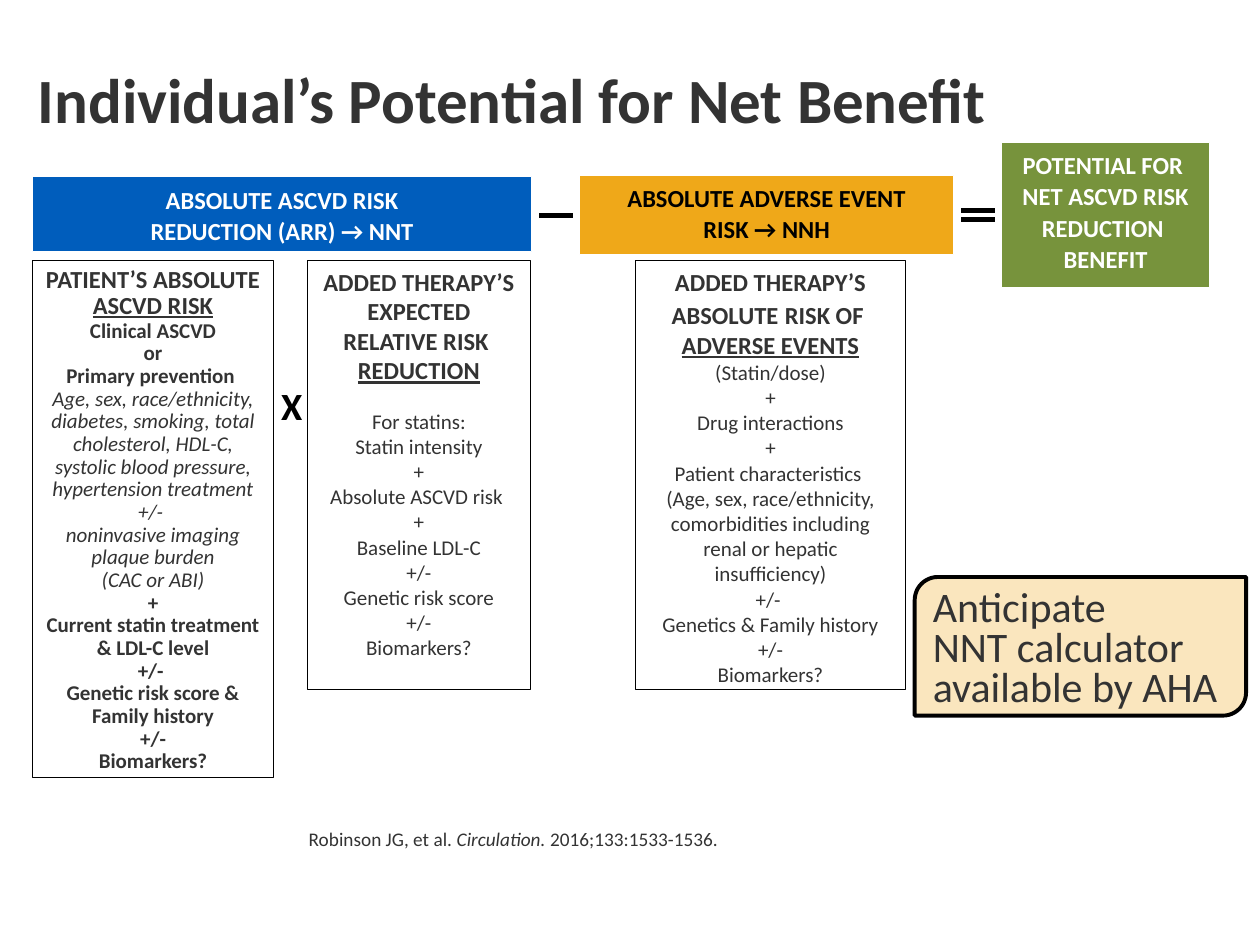
from collections import namedtuple
from pptx import Presentation
from pptx.dml.color import RGBColor
from pptx.enum.shapes import MSO_CONNECTOR as Connector, MSO_SHAPE as Shape
from pptx.enum.text import MSO_ANCHOR as Anchor, PP_ALIGN as Align
from pptx.oxml.ns import qn
from pptx.util import Inches, Pt
from lxml.etree import SubElement

Style = namedtuple("Style", "size bold italic underline", defaults=(False, False, False))


class Theme:
    font = "Calibri"
    ink, black, white = "333333", "000000", "FFFFFF"
    blue, amber, green, cream = "005DBC", "EFA819", "77933C", "FAE6BE"
    thin, medium, thick = 0.5, 2.25, 3
    styles = {
        "title": Style(36, bold=True),
        "operator": Style(22, bold=True),
        "callout": Style(24),
        "head": Style(14, bold=True),
        "head_end": Style(14, bold=True, underline=True),
        "head_gap": Style(16),
        "strong": Style(12, bold=True),
        "slanted": Style(12, italic=True),
        "plain": Style(12),
        "source": Style(11),
        "source_name": Style(11, italic=True),
    }


# The page is a grid of 100 columns and 75 rows.
COLUMNS, ROWS = 100, 75
WIDTH, HEIGHT = Inches(10), Inches(7.5)
FACTOR_TOP = 20.7


def lines(style, *texts):
    """One paragraph of a single run for each text."""
    return [[(text, style)] for text in texts]


TITLE = lines("title", "Individual’s Potential for Net Benefit")
SOURCE = [[("Robinson JG, et al. ", "source"), ("Circulation.", "source_name"),
           (" 2016;133:1533-1536.", "source")]]
TIMES = lines("operator", "X")

# place (column, row, columns, rows), fill, text colour, line spacing, paragraphs
TERMS = [
    ((2.6, 14, 39.6, 6), Theme.blue, Theme.white, 1.07,
     lines("head", "ABSOLUTE ASCVD RISK", "REDUCTION (ARR) → NNT")),
    ((46, 13.9, 29.7, 6.3), Theme.amber, Theme.black, 1.06,
     lines("head", "ABSOLUTE ADVERSE EVENT", "RISK → NNH")),
    ((79.5, 11.3, 16.5, 11.5), Theme.green, Theme.white, 1.06,
     lines("head", "POTENTIAL FOR ", "NET ASCVD RISK REDUCTION ", "BENEFIT")),
]

# column, columns, rows, line spacing, paragraphs, paragraph set apart (or None)
FACTORS = [
    (2.6, 19.1, 41, 0.9,
     lines("head", "PATIENT’S ABSOLUTE")
     + lines("head_end", "ASCVD RISK")
     + lines("strong", "Clinical ASCVD", "or", "Primary prevention ")
     + lines("slanted",
             "Age, sex, race/ethnicity, diabetes, smoking, total cholesterol, HDL-C, "
             "systolic blood pressure, hypertension treatment",
             "+/- ", "noninvasive imaging plaque burden", "(CAC or ABI)")
     + lines("strong", "+", "Current statin treatment & LDL-C level", "+/- ",
             "Genetic risk score & Family history", "+/-", "Biomarkers?"),
     None),
    (24.4, 17.7, 34, 1,
     lines("head", "ADDED THERAPY’S EXPECTED", "RELATIVE RISK ")
     + lines("head_end", "REDUCTION")
     + lines("plain", "For statins:", "Statin intensity", "+", "Absolute ASCVD risk ", "+",
             "Baseline LDL-C", "+/-", "Genetic risk score", "+/-", "Biomarkers?"),
     3),
    (50.4, 21.5, 34, 1,
     lines("head", "ADDED THERAPY’S")
     + [[("ABSOLUTE", "head"), (" ", "head_gap"), ("RISK OF ", "head")]]
     + lines("head_end", "ADVERSE EVENTS")
     + lines("plain", "(Statin/dose)", "+", "Drug interactions", "+",
             "Patient characteristics ",
             "(Age, sex, race/ethnicity, comorbidities including",
             "renal or hepatic insufficiency)", "+/- ", "Genetics & Family history",
             "+/-", "Biomarkers?"),
     None),
]

CALLOUT = lines("callout", "Anticipate", "NNT calculator available by AHA")

# column and row where each bar of the minus and equals signs starts
SIGN_BARS = [(42.8, 17.1), (76.3, 16.7), (76.3, 17.4)]
BAR_COLUMNS = 2.7


def color(value):
    return RGBColor.from_string(value)


def on_grid(column, row, columns, rows):
    across, down = WIDTH / COLUMNS, HEIGHT / ROWS
    return int(column * across), int(row * down), int(columns * across), int(rows * down)


def write(box, paragraphs, ink=Theme.ink, spacing=1, align=Align.CENTER,
          anchor=Anchor.TOP, set_apart=None):
    frame = box.text_frame
    frame.word_wrap = True
    frame.vertical_anchor = anchor
    frame.margin_left = frame.margin_right = Inches(0.09)
    for index, runs in enumerate(paragraphs):
        para = frame.add_paragraph() if index else frame.paragraphs[0]
        para.alignment = align
        para.line_spacing = spacing
        if index and index == set_apart:
            para.space_before = Pt(13.4)
        for text, name in runs:
            span = para.add_run()
            span.text = text
            style, font = Theme.styles[name], span.font
            font.name, font.size, font.color.rgb = Theme.font, Pt(style.size), color(ink)
            font.bold, font.italic, font.underline = style.bold, style.italic, style.underline


def add_text(page, place, paragraphs, **look):
    write(page.shapes.add_textbox(*on_grid(*place)), paragraphs, **look)


def add_panel(page, place, fill, line, weight, paragraphs, kind=Shape.RECTANGLE, **look):
    box = page.shapes.add_shape(kind, *on_grid(*place))
    box.shadow.inherit = False
    box.fill.solid()
    box.fill.fore_color.rgb = color(fill)
    box.line.color.rgb = color(line)
    box.line.width = Pt(weight)
    write(box, paragraphs, **look)


def add_bar(page, column, row):
    left, top, width, _ = on_grid(column, row, BAR_COLUMNS, 0)
    bar = page.shapes.add_connector(Connector.STRAIGHT, left, top, left + width, top)
    bar.line.color.rgb = color(Theme.black)
    bar.line.width = Pt(Theme.thick)
    SubElement(bar._element.spPr, qn("a:effectLst"))


def main():
    deck = Presentation()
    deck.slide_width, deck.slide_height = WIDTH, HEIGHT
    page = deck.slides.add_slide(deck.slide_layouts[6])

    add_text(page, (2.1, 1.9, 95.8, 12.5), TITLE, spacing=0.9, align=Align.LEFT,
             anchor=Anchor.MIDDLE)
    add_text(page, (23.6, 65.4, 74.3, 9), SOURCE, spacing=0.9, align=Align.LEFT)
    for column, columns, rows, spacing, paragraphs, set_apart in FACTORS:
        add_panel(page, (column, FACTOR_TOP, columns, rows), Theme.white, Theme.black,
                  Theme.thin, paragraphs, spacing=spacing, set_apart=set_apart)
    for place, fill, ink, spacing, paragraphs in TERMS:
        add_panel(page, place, fill, Theme.white, Theme.thin, paragraphs,
                  ink=ink, spacing=spacing)
    add_text(page, (20.7, 29.6, 4.9, 3.9), TIMES, ink=Theme.black, spacing=1.07)
    for column, row in SIGN_BARS:
        add_bar(page, column, row)
    add_panel(page, (72.6, 45.8, 26.3, 11), Theme.cream, Theme.black, Theme.medium, CALLOUT,
              kind=Shape.ROUND_2_DIAG_RECTANGLE, spacing=0.8, align=Align.LEFT)
    deck.save("out.pptx")


if __name__ == "__main__":
    main()
